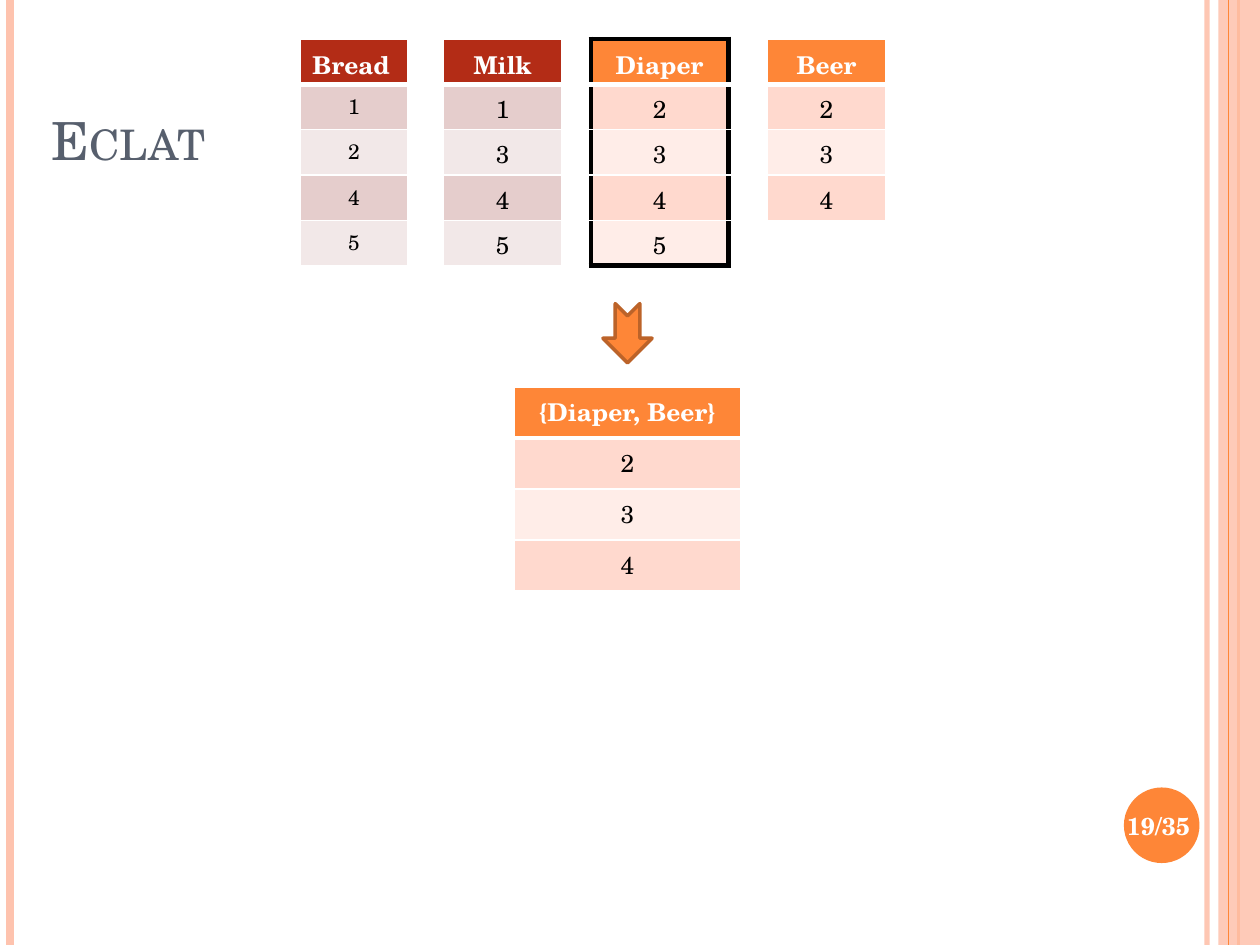
from lxml import etree
from pptx import Presentation
from pptx.dml.color import RGBColor
from pptx.enum import shapes, text
from pptx.oxml import ns
from pptx.util import Emu, Inches, Pt

FONT = "TeX Gyre Schola"
COLORS = {
    "white": "FFFFFF", "black": "000000", "title": "575F6D",
    "orange": "FE8637", "orange_edge": "BC6329", "peach": "FEC3AE",
    "orange_dark": "FFD9CE", "orange_light": "FFEDE8",
    "red": "B32C16", "red_dark": "E5CDCC", "red_light": "F2E8E8",
}
COLUMNS, ROWS = 100, 75  # page grid
UNIT = Inches(10) // COLUMNS


def grid(*lengths):
    """Turn grid columns or rows into lengths on the page."""
    return [Emu(round(length * UNIT)) for length in lengths]


def color(name):
    return RGBColor.from_string(COLORS[name])


def add_alpha(element, percent):
    for swatch in element.iter(ns.qn("a:srgbClr")):
        etree.SubElement(swatch, ns.qn("a:alpha"), val=str(percent * 1000))


def write(frame, words, size=14, ink="black", bold=False, small_caps=False,
          align=text.PP_ALIGN.CENTER, anchor=None):
    if anchor is not None:
        frame.vertical_anchor = anchor
    para = frame.paragraphs[0]
    para.alignment = align
    span = para.add_run()
    span.text = words
    span.font.name, span.font.size, span.font.bold = FONT, Pt(size), bold
    span.font.color.rgb = color(ink)
    if small_caps:
        span.font._element.set("cap", "small")


def add_text(page, box, words, **style):
    frame = page.shapes.add_textbox(*grid(*box)).text_frame
    frame.word_wrap = True
    write(frame, words, **style)
    return frame


def add_figure(page, kind, box, fill, edge=None, width=0):
    figure = page.shapes.add_shape(kind, *grid(*box))
    figure.shadow.inherit = False
    figure.fill.solid()
    figure.fill.fore_color.rgb = color(fill)
    if edge:
        figure.line.color.rgb = color(edge)
        figure.line.width = Pt(width)
    else:
        figure.line.fill.background()
    return figure


def add_rule(page, column, ink, width, alpha=100):
    rule = page.shapes.add_connector(shapes.MSO_CONNECTOR.STRAIGHT,
                                     *grid(column, 0, column, ROWS))
    rule.line.color.rgb = color(ink)
    rule.line.width = Pt(width)
    etree.SubElement(rule._element.spPr, ns.qn("a:effectLst"))
    if alpha < 100:
        add_alpha(rule._element.spPr, alpha)


def set_borders(cell, borders):
    """Borders are (colour, points) in the order left, right, top, bottom."""
    properties = cell._tc.get_or_add_tcPr()
    for index, (side, (ink, width)) in enumerate(zip("LRTB", borders)):
        line = etree.Element(ns.qn(f"a:ln{side}"), w=str(Pt(width)))
        fill = etree.SubElement(line, ns.qn("a:solidFill"))
        etree.SubElement(fill, ns.qn("a:srgbClr"), val=COLORS[ink])
        properties.insert(index, line)


def add_id_list(page, box, item, ids, hue, size=14, framed=False,
                header_align=text.PP_ALIGN.CENTER):
    """An item with the transactions that hold it, one below the other."""
    entries = [item, *ids]
    table = page.shapes.add_table(len(entries), 1, *grid(*box)).table
    table.first_row = table.horz_banding = False
    thin, thick, frame = ("white", 1), ("white", 3), ("black", 3)
    outer = frame if framed else thin
    last = len(entries) - 1
    for index, entry in enumerate(entries):
        table.rows[index].height = grid(box[3] / len(entries))[0]
        cell = table.cell(index, 0)
        cell.fill.solid()
        if index == 0:
            shade = hue
            write(cell.text_frame, entry, ink="white", bold=True,
                  align=header_align)
        else:
            shade = f"{hue}_dark" if index % 2 else f"{hue}_light"
            write(cell.text_frame, str(entry), size=size)
        cell.fill.fore_color.rgb = color(shade)
        top = {0: outer, 1: thick}.get(index, thin)
        bottom = {0: thick, last: outer}.get(index, thin)
        set_borders(cell, (outer, outer, top, bottom))


def add_side_bands(page):
    add_rule(page, 95.8, "peach", 3, alpha=93)
    add_rule(page, 0.8, "peach", 4.5)
    add_rule(page, 98.3, "orange", 1.5)
    band = add_figure(page, shapes.MSO_SHAPE.RECTANGLE,
                      (96.7, 0, COLUMNS - 96.7, ROWS), "peach")
    add_alpha(band._element.spPr, 87)
    add_rule(page, 97.5, "orange", 0.75)


def add_page_number(page, box, words):
    left, top, width, height = box
    add_figure(page, shapes.MSO_SHAPE.OVAL, box, "orange")
    frame = add_text(page, (left - 0.9, top + 0.2, width + 1.3, height - 0.3),
                     words, ink="white", bold=True,
                     anchor=text.MSO_ANCHOR.MIDDLE)
    frame.margin_left = frame.margin_right = 0


def add_item_lists(page, top, row):
    lists = [
        (23.8, 8.6, "Bread", (1, 2, 4, 5), "red",
         {"size": 12, "header_align": text.PP_ALIGN.LEFT}),
        (35.2, 9.4, "Milk", (1, 3, 4, 5), "red", {}),
        (46.9, 10.9, "Diaper", (2, 3, 4, 5), "orange", {"framed": True}),
        (60.9, 9.4, "Beer", (2, 3, 4), "orange", {}),
    ]
    for left, width, item, ids, hue, style in lists:
        box = (left, top, width, row * (len(ids) + 1))
        add_id_list(page, box, item, ids, hue, **style)


def add_intersection(page, box):
    left, top, width, _ = box
    add_id_list(page, box, "{Diaper, Beer}", (2, 3, 4), "orange")
    # Arrow centred above the table
    length, breadth = 4.7, 3.9
    arrow = add_figure(page, shapes.MSO_SHAPE.NOTCHED_RIGHT_ARROW,
                       (left + (width - length) / 2, top - 6.2, length, breadth),
                       "orange", "orange_edge", 2)
    arrow.rotation = 90


def main():
    deck = Presentation()
    deck.slide_width, deck.slide_height = grid(COLUMNS, ROWS)
    page = deck.slides.add_slide(deck.slide_layouts[6])
    add_side_bands(page)
    add_page_number(page, (89.2, 62.5, 6, 6), "19/35")
    add_text(page, (3.1, 1.6, 81.7, 12.5), "Eclat", size=30, ink="title",
             small_caps=True, align=text.PP_ALIGN.LEFT,
             anchor=text.MSO_ANCHOR.BOTTOM)
    add_item_lists(page, top=3.1, row=3.6)
    add_intersection(page, (40.8, 30.7, 18, 16.2))
    deck.save("out.pptx")


if __name__ == "__main__":
    main()
